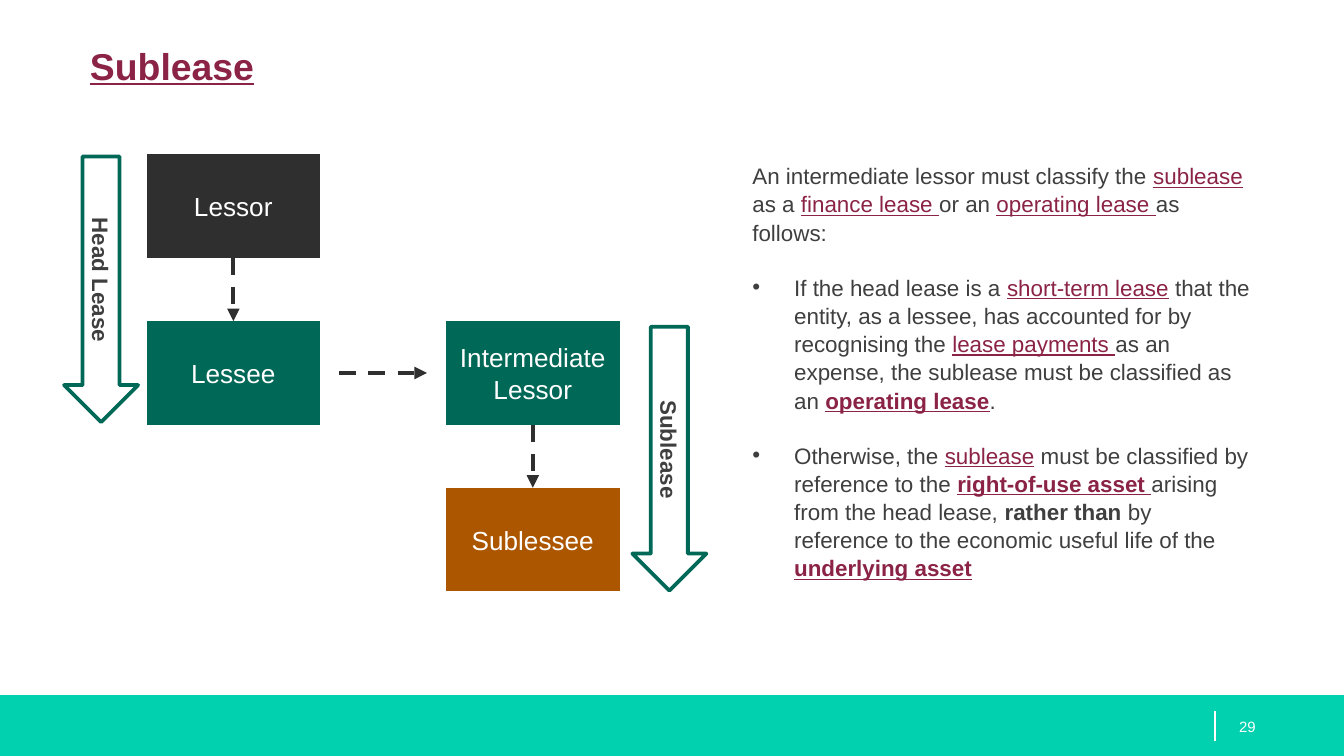
from dataclasses import dataclass

from lxml import etree
from pptx import Presentation
from pptx.dml.color import RGBColor
from pptx.enum import dml, shapes, text
from pptx.oxml.ns import qn
from pptx.util import Cm, Pt


@dataclass(frozen=True)
class Theme:
    font: str = "Arial"
    accent: str = "8B2346"
    body: str = "3F3F3F"
    dark: str = "2F2F2F"
    green: str = "006857"
    brown: str = "AC5600"
    footer: str = "01D1AE"
    white: str = "FFFFFF"
    title_size: int = 20
    box_size: int = 14
    body_size: int = 12
    number_size: int = 8


THEME = Theme()

# Run styles: colour, bold, underline
PLAIN = (THEME.body, False, False)
STRONG = (THEME.body, True, False)
TERM = (THEME.accent, False, True)
KEY_TERM = (THEME.accent, True, True)
LABEL = (THEME.white, False, False)

TITLE = "Sublease"
PAGE_NUMBER = "29"
INTRO = [
    ("An intermediate lessor must classify the ", PLAIN), ("sublease", TERM),
    (" as a ", PLAIN), ("finance lease ", TERM), ("or an ", PLAIN),
    ("operating lease ", TERM), ("as follows:", PLAIN),
]
RULES = [
    [
        ("If the head lease is a ", PLAIN), ("short-term lease", TERM),
        (" that the entity, as a lessee, has accounted for by recognising the ", PLAIN),
        ("lease payments ", TERM),
        ("as an expense, the sublease must be classified as an ", PLAIN),
        ("operating lease", KEY_TERM), (".", PLAIN),
    ],
    [
        ("Otherwise, the ", PLAIN), ("sublease", TERM),
        (" must be classified by reference to the ", PLAIN),
        ("right-of-use asset ", KEY_TERM),
        ("arising from the head lease, ", PLAIN), ("rather than ", STRONG),
        ("by reference to the economic useful life of the ", PLAIN),
        ("underlying asset", KEY_TERM),
    ],
]
# Party, column, row, fill
PARTIES = [
    ("Lessor", 0, 0, THEME.dark),
    ("Lessee", 0, 1, THEME.green),
    ("Intermediate Lessor", 1, 1, THEME.green),
    ("Sublessee", 1, 2, THEME.brown),
]
LEASES = [("Lessor", "Lessee"), ("Intermediate Lessor", "Sublessee")]
# Label, centre x, centre y, length (cm)
SPANS = [("Head Lease", 1.91, 5.47, 5.02), ("Sublease", 12.65, 8.67, 4.99)]

GRID_LEFT, GRID_TOP = 2.77, 2.92
COLUMN_STEP, ROW_STEP = 5.66, 3.15
BOX_WIDTH, BOX_HEIGHT = 3.28, 1.96
ARROW_WIDTH = 1.4
ROLE_GAP = 0.36


def rgb(colour):
    return RGBColor.from_string(colour)


def write(paragraph, runs, size):
    for words, (colour, bold, underline) in runs:
        run = paragraph.add_run()
        run.text = words
        font = run.font
        font.name, font.size = THEME.font, Pt(size)
        font.bold, font.underline = bold, underline
        font.color.rgb = rgb(colour)


def clear_insets(frame, left=0):
    frame.margin_left = Cm(left)
    frame.margin_top = frame.margin_right = frame.margin_bottom = 0


def add_block(slide, preset, left, top, width, height, fill=None, outline=None):
    block = slide.shapes.add_shape(preset, Cm(left), Cm(top), Cm(width), Cm(height))
    block.shadow.inherit = False
    if fill:
        block.fill.solid()
        block.fill.fore_color.rgb = rgb(fill)
    else:
        block.fill.background()
    if outline:
        block.line.color.rgb = rgb(outline)
        block.line.width = Pt(2)
    else:
        block.line.fill.background()
    return block


def center_label(block, label, style, size):
    frame = block.text_frame
    frame.word_wrap = True
    frame.vertical_anchor = text.MSO_ANCHOR.MIDDLE
    frame.paragraphs[0].alignment = text.PP_ALIGN.CENTER
    write(frame.paragraphs[0], [(label, style)], size)


def add_line(slide, start, end, colour, width):
    line = slide.shapes.add_connector(
        shapes.MSO_CONNECTOR.STRAIGHT, *(Cm(value) for value in start + end))
    line.line.color.rgb = rgb(colour)
    line.line.width = Pt(width)
    etree.SubElement(line._element.spPr, qn("a:effectLst"))
    return line


def add_dashed_arrow(slide, start=(0, 0), end=(0, 0)):
    arrow = add_line(slide, start, end, THEME.dark, 2.25)
    arrow.line.dash_style = dml.MSO_LINE.DASH
    etree.SubElement(arrow.line._get_or_add_ln(), qn("a:tailEnd"), type="triangle")
    return arrow


def add_title(slide):
    title = slide.shapes.title
    title.left, title.top, title.width, title.height = Cm(1.7), Cm(0.81), Cm(22), Cm(1.83)
    frame = title.text_frame
    clear_insets(frame)
    frame.vertical_anchor = text.MSO_ANCHOR.TOP
    frame.paragraphs[0].alignment = text.PP_ALIGN.LEFT
    write(frame.paragraphs[0], [(TITLE, KEY_TERM)], THEME.title_size)


def add_footer(slide):
    add_block(slide, shapes.MSO_SHAPE.RECTANGLE, 0, 13.14, 25.4, 1.15, THEME.footer)
    add_line(slide, (22.96, 13.44), (22.96, 14), THEME.white, 0.75)
    number = slide.shapes.add_textbox(Cm(22.91), Cm(13.18), Cm(1.9), Cm(1.12)).text_frame
    clear_insets(number, left=0.51)
    number.word_wrap = True
    number.vertical_anchor = text.MSO_ANCHOR.MIDDLE
    write(number.paragraphs[0], [(PAGE_NUMBER, LABEL)], THEME.number_size)


def add_explanation(slide):
    frame = slide.shapes.add_textbox(Cm(13.97), Cm(2.92), Cm(9.91), Cm(7.95)).text_frame
    frame.word_wrap = True
    intro = frame.paragraphs[0]
    intro.line_spacing = 1.05
    write(intro, INTRO, THEME.body_size)
    for rule in RULES:
        paragraph = frame.add_paragraph()
        properties = paragraph._p.get_or_add_pPr()
        properties.set("marL", str(Cm(0.79)))
        properties.set("indent", str(-Cm(0.79)))
        etree.SubElement(properties, qn("a:buFont"), typeface=THEME.font)
        etree.SubElement(properties, qn("a:buChar"), char="•")
        paragraph.line_spacing = 1.05
        paragraph.space_before = Pt(14.4)
        write(paragraph, rule, THEME.body_size)


def add_diagram(slide):
    boxes = {}
    for party, column, row, fill in PARTIES:
        boxes[party] = add_block(
            slide, shapes.MSO_SHAPE.FLOWCHART_PROCESS,
            GRID_LEFT + column * COLUMN_STEP, GRID_TOP + row * ROW_STEP,
            BOX_WIDTH, BOX_HEIGHT, fill)
        center_label(boxes[party], party, LABEL, THEME.box_size)

    for label, center_x, center_y, length in SPANS:
        span = add_block(
            slide, shapes.MSO_SHAPE.RIGHT_ARROW,
            center_x - length / 2, center_y - ARROW_WIDTH / 2,
            length, ARROW_WIDTH, outline=THEME.green)
        span.rotation = 90
        center_label(span, label, STRONG, THEME.body_size)

    for giver, taker in LEASES:
        lease = add_dashed_arrow(slide)
        lease.begin_connect(boxes[giver], 2)
        lease.end_connect(boxes[taker], 0)

    role_y = GRID_TOP + ROW_STEP + BOX_HEIGHT / 2
    add_dashed_arrow(slide, (GRID_LEFT + BOX_WIDTH + ROLE_GAP, role_y),
                     (GRID_LEFT + COLUMN_STEP - ROLE_GAP, role_y))


def main():
    deck = Presentation()
    deck.slide_width, deck.slide_height = Cm(25.4), Cm(14.29)
    slide = deck.slides.add_slide(deck.slide_layouts[5])
    add_footer(slide)
    add_title(slide)
    add_explanation(slide)
    add_diagram(slide)
    deck.save("out.pptx")


if __name__ == "__main__":
    main()
